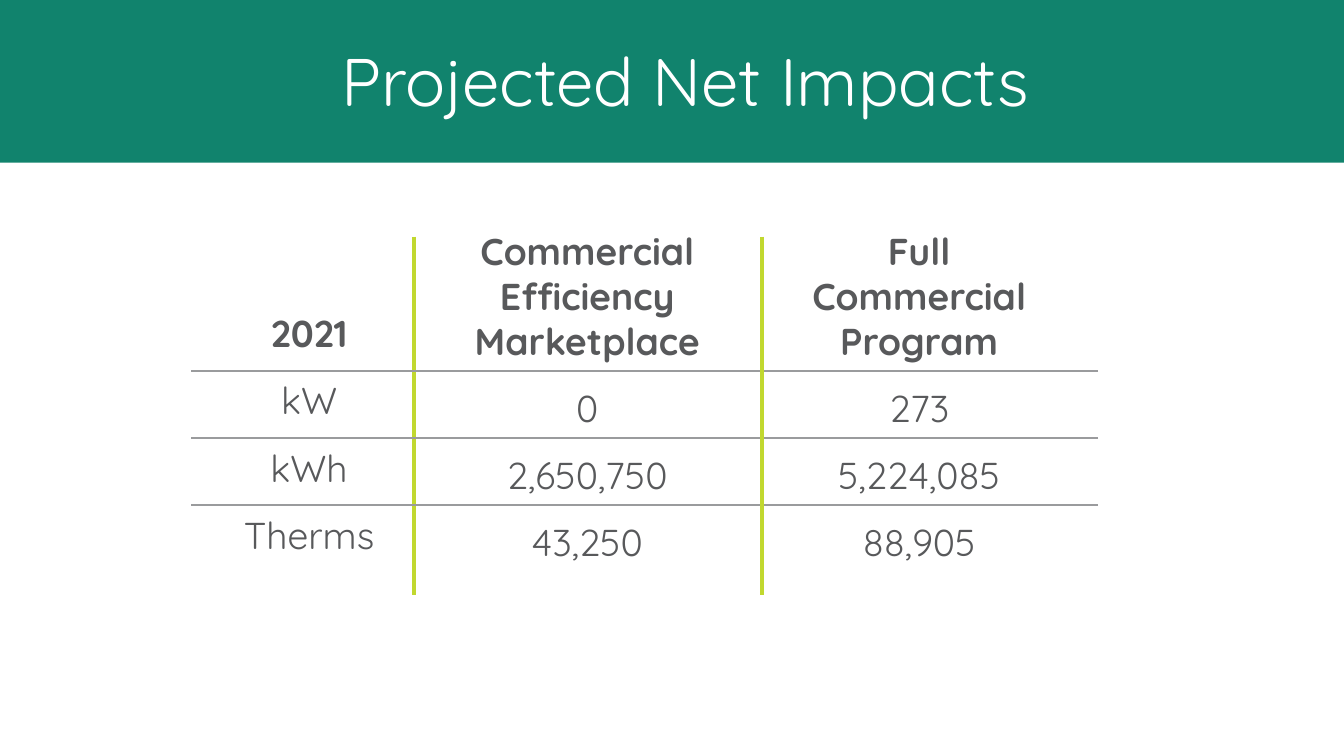
from pptx import Presentation
from pptx.dml.color import RGBColor
from pptx.enum.shapes import MSO_CONNECTOR as Conn
from pptx.enum.text import MSO_ANCHOR as Anchor, MSO_AUTO_SIZE as Fit, PP_ALIGN as Align
from pptx.oxml.ns import qn
from pptx.util import Inches, Pt
from lxml import etree

FONT = "Quicksand"
GREEN, LIME, GRAY, INK, WHITE = "11836D", "C1D82F", "9A9B9D", "58595B", "FFFFFF"
LABELS = ["2021", "kW", "kWh", "Therms"]
MARKET = ["Commercial Efficiency Marketplace", "0", "2,650,750", "43,250"]
FULL = ["Full Commercial Program", "273", "5,224,085", "88,905"]


def paint(hue):
    return RGBColor.from_string(hue)


def place(shape, x, y, w, h):
    shape.left, shape.top = Inches(x), Inches(y)
    shape.width, shape.height = Inches(w), Inches(h)


def style(para, size, hue, bold=False, indent=0, after=0):
    props = para._p.get_or_add_pPr()
    props.set("marL", str(Inches(indent)))
    props.set("indent", "0")
    etree.SubElement(props, qn("a:buNone"))
    para.alignment = Align.CENTER
    para.space_before, para.space_after = Pt(0), Pt(after)
    for run in para.runs:
        font = run.font
        font.name, font.size, font.bold = FONT, Pt(size), bold
        font.color.rgb = paint(hue)


def add_title(slide, text):
    title = slide.shapes.title
    place(title, 0, -0.02, 10.01, 1.23)
    title.fill.solid()
    title.fill.fore_color.rgb = paint(GREEN)
    frame = title.text_frame
    frame.text = text
    frame.auto_size = Fit.NONE
    frame.vertical_anchor = Anchor.MIDDLE
    style(frame.paragraphs[0], 36, WHITE, indent=0.19)


def fill_column(box, rows):
    frame = box.text_frame
    frame.text = "\n".join(rows)
    frame.word_wrap = True
    frame.auto_size = Fit.NONE
    frame.vertical_anchor = Anchor.TOP
    for i, para in enumerate(frame.paragraphs):
        style(para, 20, INK, bold=i == 0, after=12)


def add_column(slide, rows, x, y, w, h):
    box = slide.shapes.add_textbox(Inches(x), Inches(y), Inches(w), Inches(h))
    fill_column(box, rows)


def add_rule(slide, x1, y1, x2, y2, hue, width):
    ends = [Inches(v) for v in (x1, y1, x2, y2)]
    rule = slide.shapes.add_connector(Conn.STRAIGHT, *ends)
    rule.line.color.rgb = paint(hue)
    rule.line.width = Pt(width)
    etree.SubElement(rule._element.spPr, qn("a:effectLst"))


def main():
    deck = Presentation()
    deck.slide_width = Inches(10)
    deck.slide_height = deck.slide_width * 9 // 16
    slide = deck.slides.add_slide(deck.slide_layouts[1])
    add_title(slide, "Projected Net Impacts")

    body = slide.placeholders[1]
    place(body, 1.52, 2.26, 1.56, 2.86)
    fill_column(body, LABELS)
    add_column(slide, FULL, 5.69, 1.65, 2.3, 3.04)

    add_rule(slide, 3.08, 1.76, 3.08, 4.43, LIME, 2.25)
    for i in range(3):
        y = 2.76 + 0.5 * i
        add_rule(slide, 8.17, y, 1.42, y, GRAY, 1)
    add_column(slide, MARKET, 3.08, 1.65, 2.58, 3.13)
    add_rule(slide, 5.67, 1.76, 5.67, 4.43, LIME, 2.25)

    deck.save("out.pptx")


if __name__ == "__main__":
    main()
